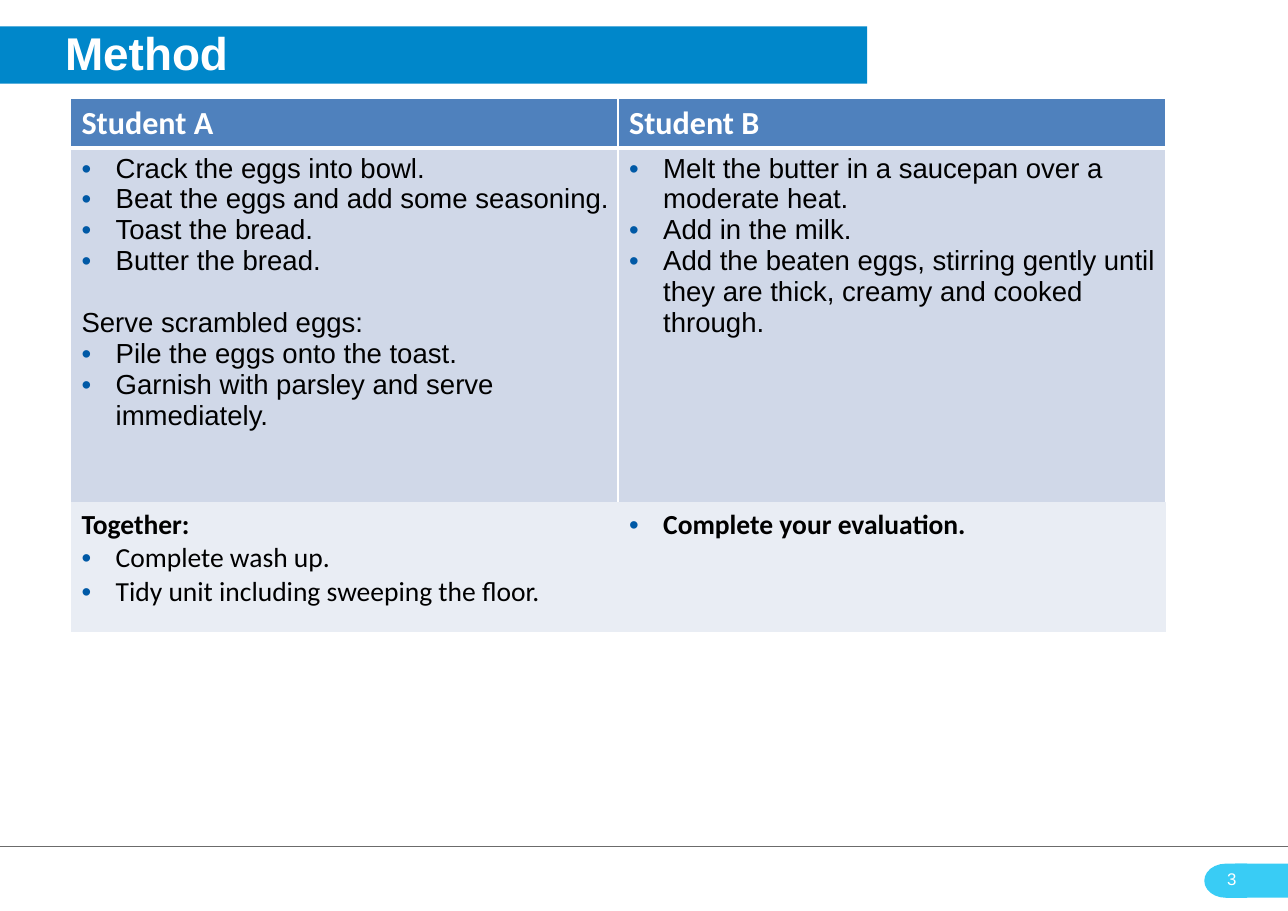
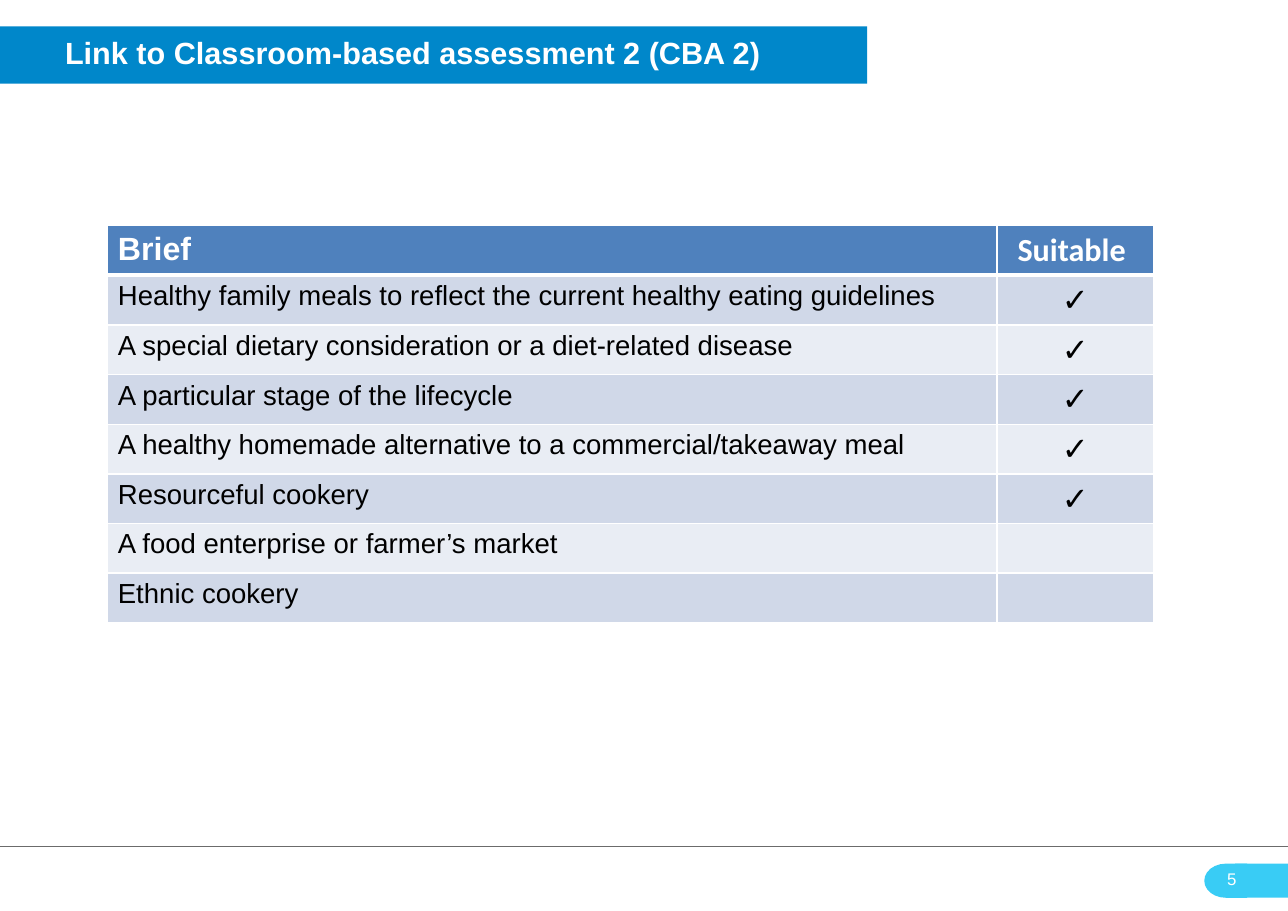
from dataclasses import dataclass

from lxml.etree import SubElement
from pptx import Presentation
from pptx.dml.color import RGBColor
from pptx.enum.shapes import MSO_CONNECTOR, MSO_SHAPE
from pptx.enum.text import MSO_ANCHOR, MSO_AUTO_SIZE, PP_ALIGN
from pptx.oxml import parse_xml
from pptx.oxml.ns import nsdecls, qn
from pptx.util import Inches, Pt

# Content: a paragraph is (kind, text), where kind picks a style below
METHOD_ROWS = [
    [[("head", "Student A")], [("head", "Student B")]],
    [
        [
            ("step", "Crack the eggs into bowl."),
            ("step", "Beat the eggs and add some seasoning."),
            ("step", "Toast the bread."),
            ("step", "Butter the bread."),
            ("lead", "Serve scrambled eggs:"),
            ("step", "Pile the eggs onto the toast."),
            ("step", "Garnish with parsley and serve immediately."),
        ],
        [
            ("step", "Melt the butter in a saucepan over a moderate heat."),
            ("step", "Add in the milk."),
            ("step", "Add the beaten eggs, stirring gently until they are thick, "
                     "creamy and cooked through."),
        ],
    ],
    [
        [
            ("joint", "Together:"),
            ("joint step", "Complete wash up."),
            ("joint step", "Tidy unit including sweeping the floor."),
        ],
        [("joint bold step", "Complete your evaluation.")],
    ],
]
BRIEFS = [
    ("Healthy family meals to reflect the current healthy eating guidelines", "✓"),
    ("A special dietary consideration or a diet-related disease", "✓"),
    ("A particular stage of the lifecycle", "✓"),
    ("A healthy homemade alternative to a commercial/takeaway meal", "✓"),
    ("Resourceful cookery", "✓"),
    ("A food enterprise or farmer’s market", ""),
    ("Ethnic cookery", ""),
]
BRIEF_ROWS = [[[("brief head", "Brief")], [("mark head", "Suitable ")]]] + [
    [[("brief", brief)], [("mark", mark)]] for brief, mark in BRIEFS
]


@dataclass(frozen=True)
class Theme:
    band: str = "0087CA"
    rule: str = "6B6B6B"
    tab: str = "39CCF5"
    header: str = "4F81BD"
    stripes: tuple = ("D0D8E8", "E9EDF4")
    bullet: str = "0059A6"
    text: str = "000000"
    light: str = "FFFFFF"
    sans: str = "Arial"
    alternate: str = "Calibri"
    head_size: int = 21
    body_size: int = 18
    number_size: int = 11


THEME = Theme()
WIDTH, HEIGHT = 11.69, 8.27
FOOTER_TOP = 7.84

# kind: (font, size, bold, colour, bulleted, space before)
STYLES = {
    "head": (THEME.alternate, THEME.head_size, True, THEME.light, False, 0),
    "step": (THEME.sans, THEME.body_size, False, THEME.text, True, 0),
    "lead": (THEME.sans, THEME.body_size, False, THEME.text, False, 20.5),
    "joint": (THEME.alternate, THEME.body_size, True, THEME.text, False, 0),
    "joint step": (THEME.alternate, THEME.body_size, False, THEME.text, True, 0),
    "joint bold step": (THEME.alternate, THEME.body_size, True, THEME.text, True, 0),
    "brief head": (THEME.sans, THEME.head_size, True, THEME.light, False, 0),
    "brief": (THEME.sans, THEME.body_size, False, THEME.text, False, 0),
    "mark head": (THEME.alternate, THEME.head_size, True, THEME.light, False, 0),
    "mark": (THEME.alternate, THEME.head_size, False, THEME.text, False, 0),
}


def color(value):
    return RGBColor.from_string(value)


def style_font(font, name, size, bold, value):
    font.name, font.size, font.bold = name, Pt(size), bold
    font.color.rgb = color(value)


def add_bullet(para):
    properties = para._p.get_or_add_pPr()
    properties.set("marL", str(Inches(0.31)))
    properties.set("indent", str(-Inches(0.31)))
    bullet_color = SubElement(properties, qn("a:buClr"))
    SubElement(bullet_color, qn("a:srgbClr"), val=THEME.bullet)
    SubElement(properties, qn("a:buFont"), typeface=THEME.sans)
    SubElement(properties, qn("a:buChar"), char="•")


# Frame shared by the slides
def add_footer(page, number):
    line = page.shapes.add_connector(
        MSO_CONNECTOR.STRAIGHT, 0, Inches(7.68), Inches(WIDTH), Inches(7.68))
    line.line.color.rgb = color(THEME.rule)
    line.line.width = Pt(0.5)
    SubElement(line._element.spPr, qn("a:effectLst"))

    for preset, left, width, turn in (
        (MSO_SHAPE.FLOWCHART_DELAY, 10.93, 0.39, 180),
        (MSO_SHAPE.RECTANGLE, 11.21, WIDTH - 11.21, 0),
    ):
        tab = page.shapes.add_shape(
            preset, Inches(left), Inches(FOOTER_TOP), Inches(width), Inches(0.31))
        tab.rotation = turn
        tab.shadow.inherit = False
        tab.fill.solid()
        tab.fill.fore_color.rgb = color(THEME.tab)
        tab.line.fill.background()

    box = page.shapes.add_textbox(
        Inches(11.04), Inches(FOOTER_TOP), Inches(0.56), Inches(0.28))
    box.text_frame.word_wrap = True
    para = box.text_frame.paragraphs[0]
    para.text = str(number)
    style_font(para.runs[0].font, THEME.sans, THEME.number_size, False, THEME.light)


def add_page(deck, title, title_size, number):
    page = deck.slides.add_slide(deck.slide_layouts[5])
    add_footer(page, number)
    band = page.shapes.title
    band.left, band.top = 0, Inches(0.24)
    band.width, band.height = Inches(7.87), Inches(0.52)
    band.fill.solid()
    band.fill.fore_color.rgb = color(THEME.band)
    frame = band.text_frame
    frame.text = title
    frame.word_wrap = True
    frame.auto_size = MSO_AUTO_SIZE.NONE
    frame.vertical_anchor = MSO_ANCHOR.MIDDLE
    frame.margin_left, frame.margin_bottom = Inches(0.59), Inches(0.05)
    frame.margin_right = frame.margin_top = 0
    para = frame.paragraphs[0]
    para.alignment = PP_ALIGN.LEFT
    style_font(para.runs[0].font, THEME.sans, title_size, True, THEME.light)
    return page


# Tables
def set_borders(cell, widths):
    """Widths in points for the left, right, top and bottom edges; 0 is no line."""
    properties = cell._tc.get_or_add_tcPr()
    for place, (edge, width) in enumerate(zip("LRTB", widths)):
        paint = (f'<a:solidFill><a:srgbClr val="{THEME.light}"/></a:solidFill>'
                 if width else "<a:noFill/>")
        properties.insert(place, parse_xml(
            f'<a:ln{edge} {nsdecls("a")} w="{Pt(width)}">{paint}</a:ln{edge}>'))


def fill_cell(cell, paragraphs):
    cell.margin_right = Inches(0.08)
    cell.margin_left = Inches(0.1)
    frame = cell.text_frame
    for index, (kind, text) in enumerate(paragraphs):
        name, size, bold, value, bulleted, space = STYLES[kind]
        para = frame.add_paragraph() if index else frame.paragraphs[0]
        para.text = text
        if bulleted:
            add_bullet(para)
        if space:
            para.space_before = Pt(space)
        if kind.startswith("mark"):
            para.alignment = PP_ALIGN.CENTER
            cell.vertical_anchor = MSO_ANCHOR.MIDDLE
            cell.margin_right = cell.margin_left
        style_font(para.font, name, size, bold, value)
        for span in para.runs:
            style_font(span.font, name, size, bold, value)


def add_grid(page, rows, left, top, widths, heights, borders):
    table = page.shapes.add_table(
        len(rows), len(widths), Inches(left), Inches(top),
        Inches(sum(widths)), Inches(sum(heights))).table
    for column, width in zip(table.columns, widths):
        column.width = Inches(width)
    for index, (row, height) in enumerate(zip(rows, heights)):
        table.rows[index].height = Inches(height)
        fill = THEME.stripes[(index - 1) % 2] if index else THEME.header
        for cell, paragraphs in zip(table.rows[index].cells, row):
            fill_cell(cell, paragraphs)
            cell.fill.solid()
            cell.fill.fore_color.rgb = color(fill)
            set_borders(cell, borders[index])


def main():
    deck = Presentation()
    deck.slide_width, deck.slide_height = Inches(WIDTH), Inches(HEIGHT)
    header_edges, all_edges = (1, 1, 1, 3), (1, 1, 1, 1)

    method = add_page(deck, "Method", 30, 3)
    add_grid(method, METHOD_ROWS, 0.64, 0.89, [4.97] * 2, [0.43, 3.22, 1.18],
             [header_edges, (1, 1, 3, 0), (0, 0, 0, 0)])

    link = add_page(deck, "Link to Classroom-based assessment 2 (CBA 2)", 20, 5)
    add_grid(link, BRIEF_ROWS, 0.97, 2.05, [8.08, 1.42], [0.45] * len(BRIEF_ROWS),
             [header_edges, (1, 1, 3, 1)] + [all_edges] * (len(BRIEFS) - 1))

    deck.save("out.pptx")


if __name__ == "__main__":
    main()
